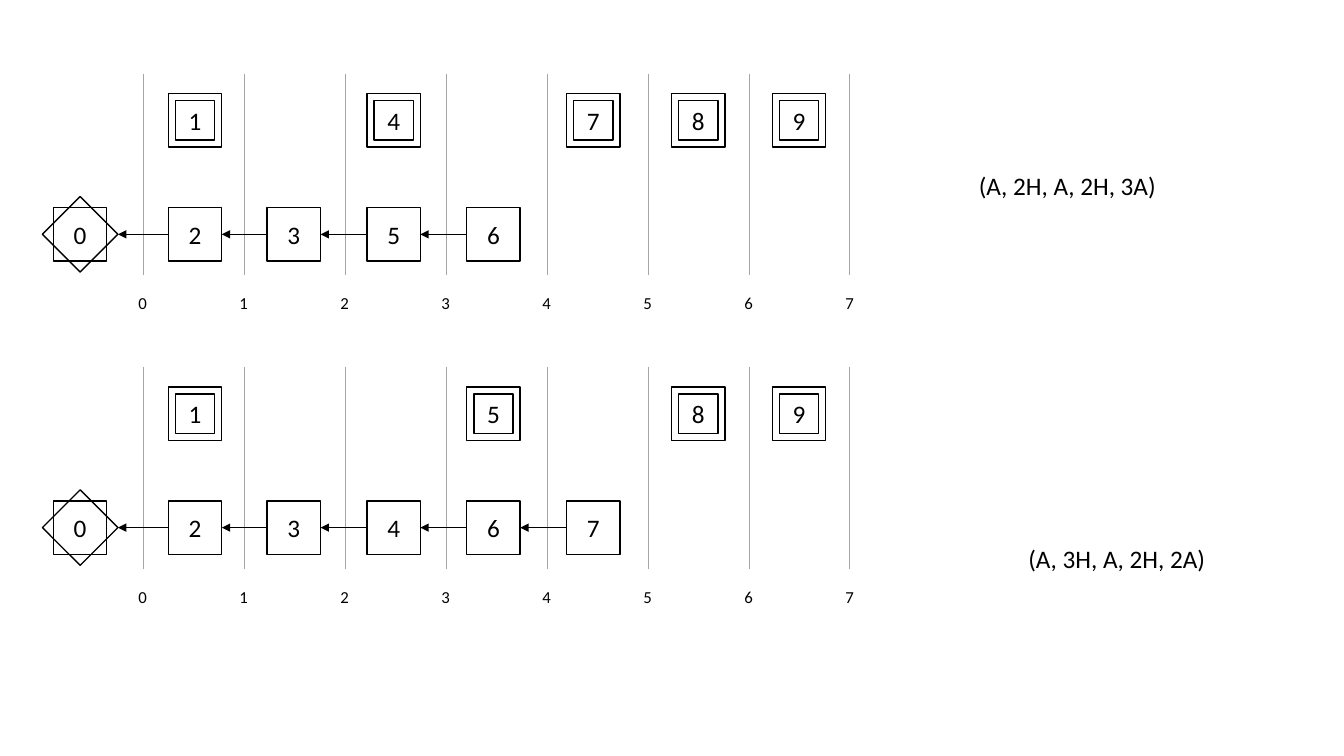
from dataclasses import dataclass
from lxml import etree
from pptx import Presentation
from pptx.dml.color import RGBColor
from pptx.enum.shapes import MSO_CONNECTOR, MSO_SHAPE
from pptx.enum.text import MSO_ANCHOR, MSO_AUTO_SIZE, PP_ALIGN
from pptx.oxml import parse_xml
from pptx.oxml.ns import qn
from pptx.util import Pt

RECT = MSO_SHAPE.RECTANGLE
STRAIGHT = MSO_CONNECTOR.STRAIGHT
MIDDLE = MSO_ANCHOR.MIDDLE
CENTER = PP_ALIGN.CENTER
GROW = MSO_AUTO_SIZE.SHAPE_TO_FIT_TEXT

LANES = [
    {
        "top": 73,
        "hidden": [("1", 0), ("4", 2), ("7", 4), ("8", 5), ("9", 6)],
        "chain": [("2", 0), ("3", 1), ("5", 2), ("6", 3)],
        "caption": ("(A, 2H, A, 2H, 3A)", 961, 164),
    },
    {
        "top": 364,
        "hidden": [("1", 0), ("5", 3), ("8", 5), ("9", 6)],
        "chain": [("2", 0), ("3", 1), ("4", 2), ("6", 3), ("7", 4)],
        "caption": ("(A, 3H, A, 2H, 2A)", 1010, 534),
    },
]
SLOTS = [167, 265, 364, 463, 562, 666, 766]
TICKS = 8
SCALE = 9144
GRID_X, GRID_W, GRID_H = 142, 701, 200
BOX, INNER, FIRST_X, TIP_X = 53, 39, 53, 117
HIDDEN_Y, CHAIN_Y, TICK_Y = 20, 133, 213
TICK_W, TICK_H = 29, 30


@dataclass(frozen=True)
class Theme:
    ink: str = "000000"
    rule: str = "A5A5A5"
    font: str = "Calibri"
    body: int = 18
    tick: int = 12
    line: float = 1
    hair: float = 0.5


THEME = Theme()


def px(value):
    return round(value * SCALE)


def style(frame, text, size):
    frame.text = text
    font = frame.paragraphs[0].font
    font.name = THEME.font
    font.size = Pt(size)
    font.color.rgb = RGBColor.from_string(THEME.ink)


def ink(line):
    line.color.rgb = RGBColor.from_string(THEME.ink)
    line.width = Pt(THEME.line)


def square(shapes, left, top, side, text=""):
    box = shapes.add_shape(RECT, px(left), px(top), px(side), px(side))
    box.shadow.inherit = False
    box.fill.background()
    ink(box.line)
    if text:
        frame = box.text_frame
        style(frame, text, THEME.body)
        frame.vertical_anchor = MIDDLE
        frame.paragraphs[0].alignment = CENTER
    return box


def label(shapes, text, left, top, width, height, size, wrap):
    box = shapes.add_textbox(px(left), px(top), px(width), px(height))
    frame = box.text_frame
    style(frame, text, size)
    frame.word_wrap = wrap
    frame.auto_size = GROW


def border(cell):
    space = "http://schemas.openxmlformats.org/drawingml/2006/main"
    solid = f'<a:solidFill><a:srgbClr val="{THEME.rule}"/></a:solidFill>'
    for side in "LRTB":
        paint = solid if side in "LR" else "<a:noFill/>"
        cell._tc.get_or_add_tcPr().append(parse_xml(
            f'<a:ln{side} xmlns:a="{space}" w="{Pt(THEME.hair)}">{paint}</a:ln{side}>'))
    cell.fill.background()


def grid(shapes, top):
    table = shapes.add_table(
        2, TICKS - 1, px(GRID_X), px(top), px(GRID_W), px(GRID_H)).table
    table.first_row = False
    table.horz_banding = False
    for cell in table.iter_cells():
        border(cell)


def arrow(shapes, start, tip, mid, last):
    line = shapes.add_connector(STRAIGHT, start.left, px(mid), px(tip), px(mid))
    line.begin_connect(start, 1)
    if last:
        line.end_connect(last, 3)
    ink(line.line)
    etree.SubElement(line.line._get_or_add_ln(), qn("a:tailEnd"), type="triangle")
    etree.SubElement(line._element.spPr, qn("a:effectLst"))


def lane(shapes, top, hidden, chain, caption):
    grid(shapes, top)
    for tick in range(TICKS):
        left = GRID_X - TICK_W / 2 + tick * GRID_W / (TICKS - 1)
        label(shapes, str(tick), left, top + TICK_Y,
              TICK_W, TICK_H, THEME.tick, True)

    row = top + CHAIN_Y
    root = shapes.add_group_shape().shapes
    square(root, FIRST_X, row, BOX, "0")
    square(root, FIRST_X, row, BOX).rotation = 45

    last = None
    for text, slot in chain:
        box = square(shapes, SLOTS[slot], row, BOX, text)
        arrow(shapes, box, TIP_X, row + BOX / 2, last)
        last = box

    inset = (BOX - INNER) / 2
    for text, slot in hidden:
        pair = shapes.add_group_shape().shapes
        square(pair, SLOTS[slot], top + HIDDEN_Y, BOX, text)
        square(pair, SLOTS[slot] + inset, top + HIDDEN_Y + inset, INNER)

    text, left, high = caption
    label(shapes, text, left, high, 198, 40, THEME.body, False)


def main():
    deck = Presentation()
    deck.slide_width, deck.slide_height = px(1333), px(750)
    slide = deck.slides.add_slide(deck.slide_layouts[6])
    for item in LANES:
        lane(slide.shapes, **item)
    deck.save("out.pptx")


if __name__ == "__main__":
    main()
